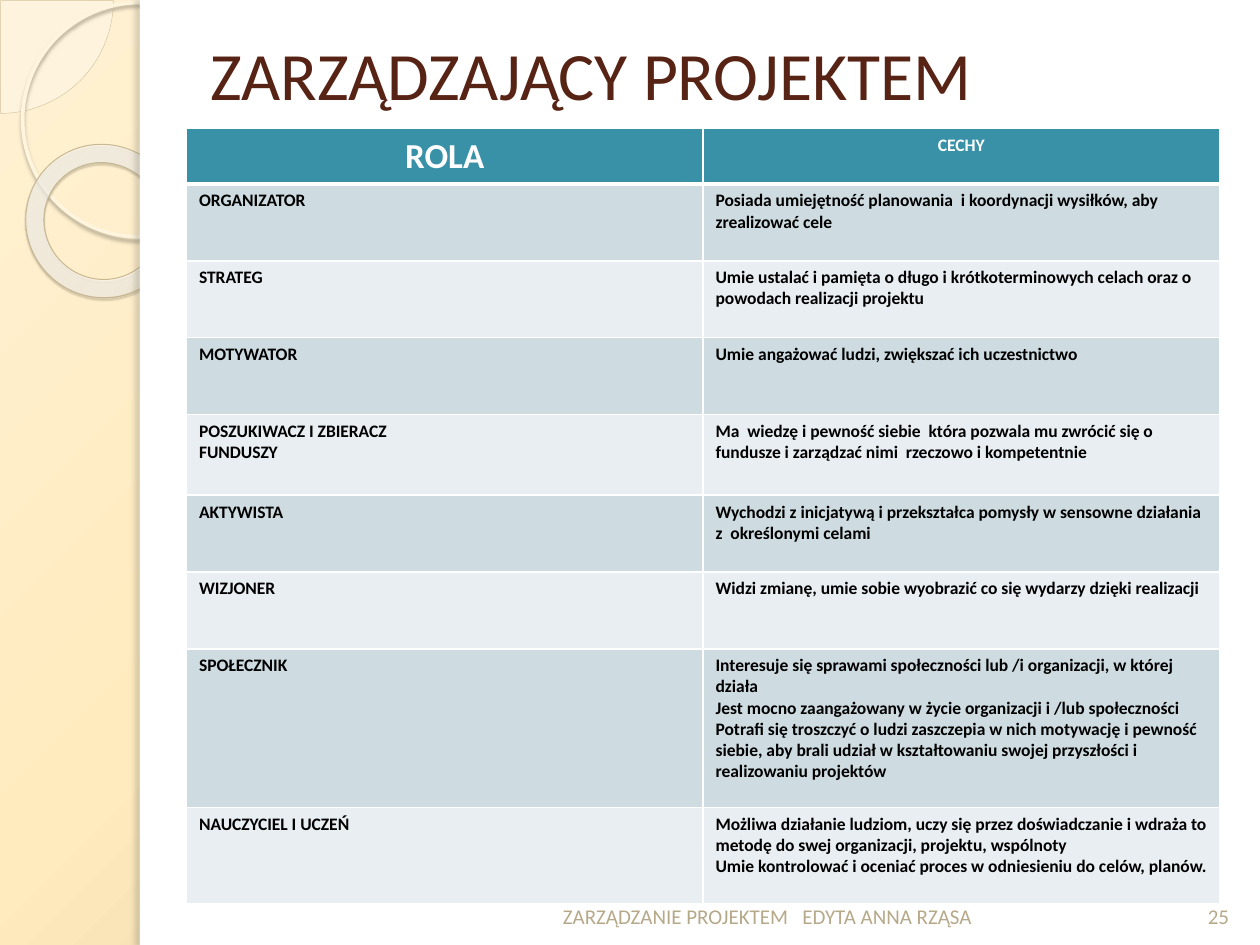
from dataclasses import dataclass
from typing import Optional

from lxml import etree
from pptx import Presentation
from pptx.dml.color import RGBColor
from pptx.enum.shapes import MSO_SHAPE
from pptx.enum.text import MSO_ANCHOR, PP_ALIGN
from pptx.oxml.ns import qn
from pptx.util import Inches, Pt

PIE, ELLIPSE, DONUT, RECTANGLE = MSO_SHAPE.PIE, MSO_SHAPE.OVAL, MSO_SHAPE.DONUT, MSO_SHAPE.RECTANGLE
LEFT, CENTER = PP_ALIGN.LEFT, PP_ALIGN.CENTER
MIDDLE, BOTTOM = MSO_ANCHOR.MIDDLE, MSO_ANCHOR.BOTTOM
FONT = "Calibri"
COLORS = {
    "white": "FFFFFF", "black": "000000", "title": "572314", "footer": "B6A98A",
    "header": "3891A7", "odd": "CEDCE1", "even": "E8EEF1",
    "pie": "FEFAF4", "pie_line": "D3C39F", "circle_line": "FFF5DE", "ring_line": "C7B893",
    "circle_shadow": "B0A68F", "ring_shadow": "5A5444", "panel_shadow": "736F63",
}


@dataclass(frozen=True)
class Stop:
    color: str
    position: int = 0
    opacity: int = 100


@dataclass(frozen=True)
class Gradient:
    stops: tuple[Stop, ...]
    focus: tuple[int, int, int, int]


@dataclass(frozen=True)
class Shadow:
    color: str
    opacity: int
    blur: float
    distance: float
    direction: int


@dataclass(frozen=True)
class Decoration:
    kind: int
    box: tuple[float, float, float, float]
    fill: Optional[Stop | Gradient] = None
    line: Optional[tuple[str, float]] = None
    shadow: Optional[Shadow] = None
    adjustments: tuple[float, ...] = ()
    rotation: float = 0


@dataclass(frozen=True)
class Label:
    text: str
    box: tuple[float, float, float, float]
    size: float
    color: str
    anchor: int
    alignment: int = LEFT


@dataclass(frozen=True)
class Role:
    name: str
    traits: str
    height: float = 0.61


BACKGROUND = Gradient((Stop("FFF1D3"), Stop("FFEBBE", 40), Stop("C9B484", 100)), (-24, -20, 124, 120))
RING_FILL = Gradient((Stop("FFFCF6", 0, 70), Stop("FFFEFB", 70, 55), Stop("F0D28E", 100, 60)),
                     (-408, -50, 508, 150))
WHITE = Stop(COLORS["white"])
DECORATIONS = [
    Decoration(PIE, (-0.89, -0.89, 1.79, 1.79), Stop(COLORS["pie"], opacity=33),
               (COLORS["pie_line"], 0.25), adjustments=(0, 54)),
    Decoration(ELLIPSE, (0.18, 0.02, 1.86, 1.86), line=(COLORS["circle_line"], 2.15),
               shadow=Shadow(COLORS["circle_shadow"], 85, 2, 2, 90)),
    Decoration(DONUT, (0.2, 1.15, 1.23, 1.21), RING_FILL, (COLORS["ring_line"], 0.58),
               Shadow(COLORS["ring_shadow"], 35, 1, 1.2, 75), (0.12,), 38.6),
    Decoration(RECTANGLE, (1.11, 0, 8.89, 7.5), WHITE),
    Decoration(RECTANGLE, (1.11, 0, 0.08, 7.5), WHITE,
               shadow=Shadow(COLORS["panel_shadow"], 25, 3, 3, 180)),
]
LABELS = [
    Label("ZARZĄDZAJĄCY PROJEKTEM", (1.57, 0.3, 8.2, 0.56), 38.7, COLORS["title"], MIDDLE),
    Label("ZARZĄDZANIE PROJEKTEM   EDYTA ANNA RZĄSA", (4.37, 7.11, 5.04, 0.31), 12, COLORS["footer"], BOTTOM),
    Label("25", (9.42, 6.9, 0.5, 0.52), 12, COLORS["footer"], BOTTOM, CENTER),
]
ROLES = [
    Role("ROLA", "CECHY", 0.43),
    Role("ORGANIZATOR", "Posiada umiejętność planowania  i koordynacji wysiłków, aby zrealizować cele"),
    Role("STRATEG", "Umie ustalać i pamięta o długo i krótkoterminowych celach oraz o powodach realizacji projektu"),
    Role("MOTYWATOR", "Umie angażować ludzi, zwiększać ich uczestnictwo"),
    Role("POSZUKIWACZ I ZBIERACZ\nFUNDUSZY",
         "Ma  wiedzę i pewność siebie  która pozwala mu zwrócić się o fundusze i zarządzać nimi  "
         "rzeczowo i kompetentnie", 0.64),
    Role("AKTYWISTA", "Wychodzi z inicjatywą i przekształca pomysły w sensowne działania z  określonymi celami"),
    Role("WIZJONER", "Widzi zmianę, umie sobie wyobrazić co się wydarzy dzięki realizacji"),
    Role("SPOŁECZNIK",
         "Interesuje się sprawami społeczności lub /i organizacji, w której działa\n"
         "Jest mocno zaangażowany w życie organizacji i /lub społeczności\n"
         "Potrafi się troszczyć o ludzi zaszczepia w nich motywację i pewność siebie, aby brali udział "
         "w kształtowaniu swojej przyszłości i realizowaniu projektów", 1.26),
    Role("NAUCZYCIEL I UCZEŃ",
         "Możliwa działanie ludziom, uczy się przez doświadczanie i wdraża to metodę do swej organizacji, "
         "projektu, wspólnoty\nUmie kontrolować i oceniać proces w odniesieniu do celów, planów.", 0.76),
]


def add_node(parent, tag: str, **attributes):
    return etree.SubElement(parent, qn(tag), {name: str(value) for name, value in attributes.items()})


def add_color(parent, color: str, opacity: int = 100) -> None:
    node = add_node(parent, "a:srgbClr", val=color)
    if opacity < 100:
        add_node(node, "a:alpha", val=opacity * 1000)


def replace_fill(properties, fill: Stop | Gradient) -> None:
    solid = properties.find(qn("a:solidFill"))
    if isinstance(fill, Stop):
        solid.clear()
        add_color(solid, fill.color, fill.opacity)
        return
    gradient = etree.Element(qn("a:gradFill"), rotWithShape="1")
    stops = add_node(gradient, "a:gsLst")
    for stop in fill.stops:
        add_color(add_node(stops, "a:gs", pos=stop.position * 1000), stop.color, stop.opacity)
    circle = add_node(gradient, "a:path", path="circle")
    add_node(circle, "a:fillToRect", **{side: value * 1000 for side, value in zip("ltrb", fill.focus)})
    properties.replace(solid, gradient)


def add_decoration(slide, decoration: Decoration) -> None:
    shape = slide.shapes.add_shape(decoration.kind, *map(Inches, decoration.box))
    shape.rotation = decoration.rotation
    for index, value in enumerate(decoration.adjustments):
        shape.adjustments[index] = value
    properties = shape.element.spPr
    if decoration.fill:
        shape.fill.solid()
        replace_fill(properties, decoration.fill)
    else:
        shape.fill.background()
    if decoration.line:
        color, width = decoration.line
        shape.line.color.rgb = RGBColor.from_string(color)
        shape.line.width = Pt(width)
    else:
        shape.line.fill.background()
    shape.shadow.inherit = False
    if decoration.shadow:
        shadow = decoration.shadow
        node = add_node(properties.find(qn("a:effectLst")), "a:outerShdw", blurRad=Pt(shadow.blur),
                        dist=Pt(shadow.distance), dir=shadow.direction * 60000, algn="tl", rotWithShape=0)
        add_color(node, shadow.color, shadow.opacity)


def format_text(text_frame, size: float, color: str, alignment: int = LEFT, bold: bool = False) -> None:
    for paragraph in text_frame.paragraphs:
        paragraph.alignment = alignment
        for run in paragraph.runs:
            run.font.name, run.font.size, run.font.bold = FONT, Pt(size), bold
            run.font.color.rgb = RGBColor.from_string(color)


def add_label(slide, label: Label) -> None:
    text_frame = slide.shapes.add_textbox(*map(Inches, label.box)).text_frame
    text_frame.word_wrap = True
    text_frame.vertical_anchor = label.anchor
    text_frame.text = label.text
    format_text(text_frame, label.size, label.color, label.alignment)


def add_borders(cell, top: float, bottom: float) -> None:
    properties = cell._tc.get_or_add_tcPr()
    for index, (side, width) in enumerate(zip("LRTB", (1, 1, top, bottom))):
        line = add_node(properties, f"a:ln{side}", w=Pt(width))
        add_color(add_node(line, "a:solidFill"), COLORS["white"])
        properties.insert(index, line)


def add_role_table(slide, roles: list[Role]) -> None:
    height = sum(role.height for role in roles)
    table = slide.shapes.add_table(len(roles), 2, Inches(1.48), Inches(1.02), Inches(8.2), Inches(height)).table
    table.first_row = table.horz_banding = False
    for row, role in enumerate(roles):
        table.rows[row].height = Inches(role.height)
        header = row == 0
        fill = "header" if header else ("even", "odd")[row % 2]
        for column, text in enumerate((role.name, role.traits)):
            cell = table.cell(row, column)
            cell.text_frame.text = text
            format_text(cell.text_frame, 20 if header and column == 0 else 10,
                        COLORS["white" if header else "black"], CENTER if header else LEFT, True)
            cell.fill.solid()
            cell.fill.fore_color.rgb = RGBColor.from_string(COLORS[fill])
            add_borders(cell, 3 if row == 1 else 1, 3 if header else 1)


def main() -> None:
    """Build the slide on the roles of a project manager."""
    presentation = Presentation()
    presentation.slide_width, presentation.slide_height = Inches(10), Inches(7.5)
    slide = presentation.slides.add_slide(presentation.slide_layouts[6])
    slide.background.fill.solid()
    replace_fill(slide.element.find(".//" + qn("p:bgPr")), BACKGROUND)
    for decoration in DECORATIONS:
        add_decoration(slide, decoration)
    add_role_table(slide, ROLES)
    for label in LABELS:
        add_label(slide, label)
    presentation.save("out.pptx")


if __name__ == "__main__":
    main()
